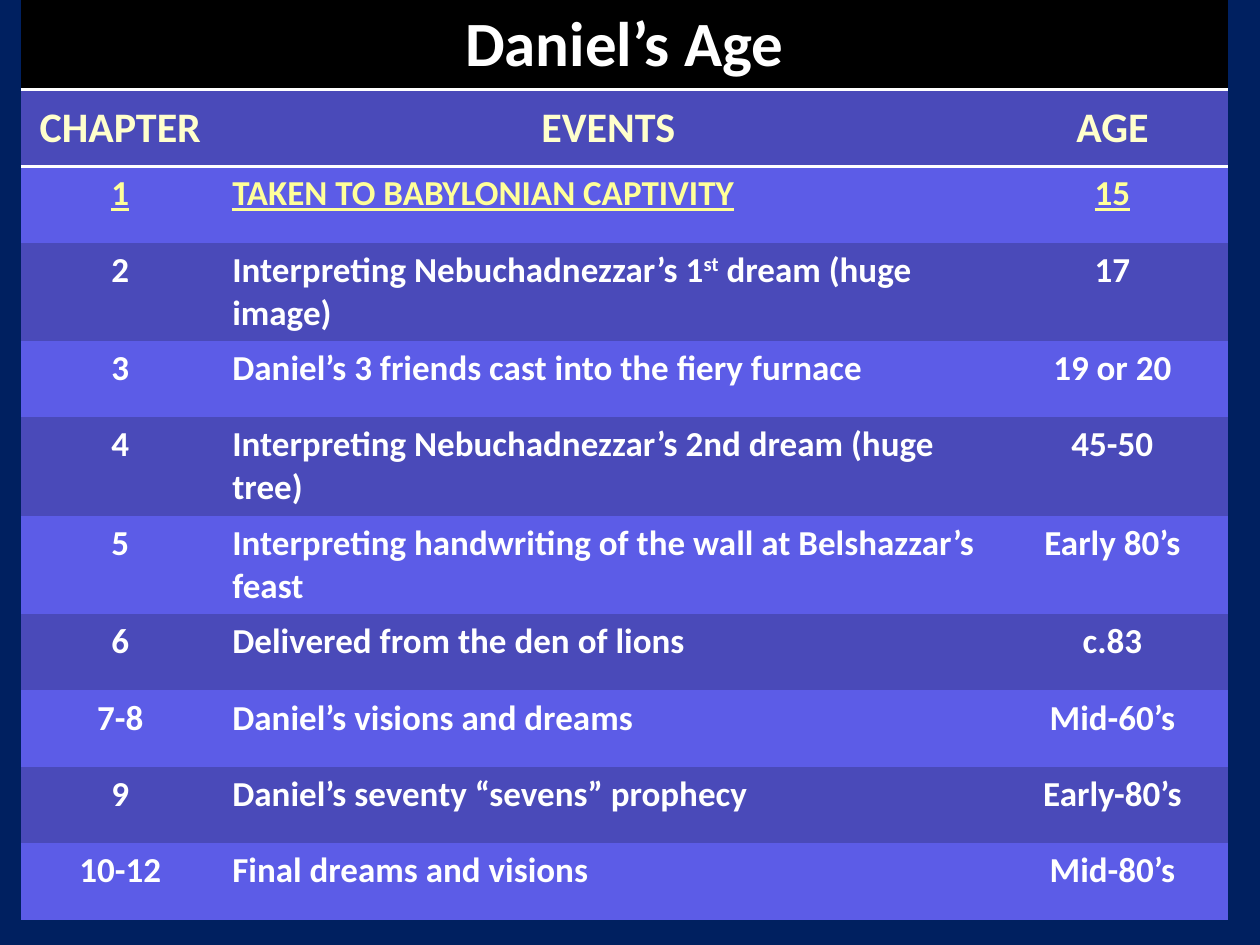
from dataclasses import dataclass
from lxml.etree import SubElement as Sub
from pptx import Presentation as Deck
from pptx.dml.color import RGBColor as Rgb
from pptx.enum.text import MSO_ANCHOR as Anchor, PP_ALIGN as Align
from pptx.oxml.ns import qn
from pptx.util import Cm, Pt


@dataclass(frozen=True)
class Theme:
    font: str = "Calibri"
    page: str = "002060"
    black: str = "000000"
    dark: str = "4A4AB9"
    light: str = "5C5CE7"
    white: str = "FFFFFF"
    cream: str = "FFFFCC"
    lemon: str = "FFFF99"
    title: int = 36
    head: int = 24
    body: int = 20


THEME = Theme()
PLAIN = "{2D5ABB26-0587-4C30-8999-92F81FD0307C}"
COLS = (4.01, 15.67, 4.65)
SHORT, TALL, TOP = 1.54, 1.9, 1.73
TITLE = "Daniel’s Age"
HEADS = ("CHAPTER", "EVENTS", "AGE")
ROWS = [
    ("1", ["TAKEN TO BABYLONIAN CAPTIVITY"], "15", SHORT),
    ("2", ["Interpreting Nebuchadnezzar’s 1", "st", " dream (huge image)"], "17", TALL),
    ("3", ["Daniel’s 3 friends cast into the fiery furnace"], "19 or 20", SHORT),
    ("4", ["Interpreting Nebuchadnezzar’s 2nd dream (huge tree)"], "45-50", TALL),
    ("5", ["Interpreting handwriting of the wall at Belshazzar’s feast"], "Early 80’s", TALL),
    ("6", ["Delivered from the den of lions"], "c.83", SHORT),
    ("7-8", ["Daniel’s visions and dreams"], "Mid-60’s", SHORT),
    ("9", ["Daniel’s seventy “sevens” prophecy"], "Early-80’s", SHORT),
    ("10-12", ["Final dreams and visions"], "Mid-80’s", SHORT),
]


def paint(cell, color):
    cell.fill.solid()
    cell.fill.fore_color.rgb = Rgb.from_string(color)


def write(cell, parts, size, color, align=Align.CENTER, under=None):
    para = cell.text_frame.paragraphs[0]
    para.alignment = align
    for part in parts:
        run = para.add_run()
        run.text = part
        font = run.font
        font.name, font.size, font.bold = THEME.font, Pt(size), True
        font.underline = under
        font.color.rgb = Rgb.from_string(color)
        if part == "st":
            font._element.set("baseline", "30000")


def rule(cell, side, color, width):
    props = cell._tc.get_or_add_tcPr()
    line = Sub(props, qn(side), w=str(Pt(width)))
    props.insert(0, line)
    fill = Sub(line, qn("a:solidFill"))
    Sub(fill, qn("a:srgbClr"), val=color)


def title_row(table):
    cells = list(table.rows[0].cells)
    for cell in cells:
        paint(cell, THEME.black)
        rule(cell, "a:lnB", THEME.white, 2)
    cells[0].merge(cells[-1])
    write(cells[0], [TITLE], THEME.title, THEME.white)


def head_row(table):
    for cell, text in zip(table.rows[1].cells, HEADS):
        paint(cell, THEME.dark)
        rule(cell, "a:lnT", THEME.white, 2)
        cell.vertical_anchor = Anchor.MIDDLE
        write(cell, [text], THEME.head, THEME.cream)


def body_rows(table):
    for num, (part, event, age, _) in enumerate(ROWS):
        cells = table.rows[num + 2].cells
        color = THEME.white if num else THEME.lemon
        for col, (cell, text) in enumerate(zip(cells, ([part], event, [age]))):
            paint(cell, THEME.dark if num % 2 else THEME.light)
            align = Align.LEFT if col == 1 else Align.CENTER
            write(cell, text, THEME.body, color, align, None if num else True)


def age_table(slide, left, top):
    highs = [TOP, SHORT] + [row[-1] for row in ROWS]
    frame = slide.shapes.add_table(len(highs), len(COLS), Cm(left), Cm(top),
                                   Cm(sum(COLS)), Cm(sum(highs)))
    table = frame.table
    table.first_row = table.horz_banding = False
    for style in frame._element.iter(qn("a:tableStyleId")):
        style.text = PLAIN
    for col, wide in zip(table.columns, COLS):
        col.width = Cm(wide)
    for row, high in zip(table.rows, highs):
        row.height = Cm(high)
    title_row(table)
    head_row(table)
    body_rows(table)


def main():
    deck = Deck()
    deck.slide_width, deck.slide_height = Cm(25.4), Cm(19.05)
    slide = deck.slides.add_slide(deck.slide_layouts[6])
    back = slide.background.fill
    back.solid()
    back.fore_color.rgb = Rgb.from_string(THEME.page)
    age_table(slide, 0.42, 0)
    deck.save("out.pptx")


if __name__ == "__main__":
    main()
